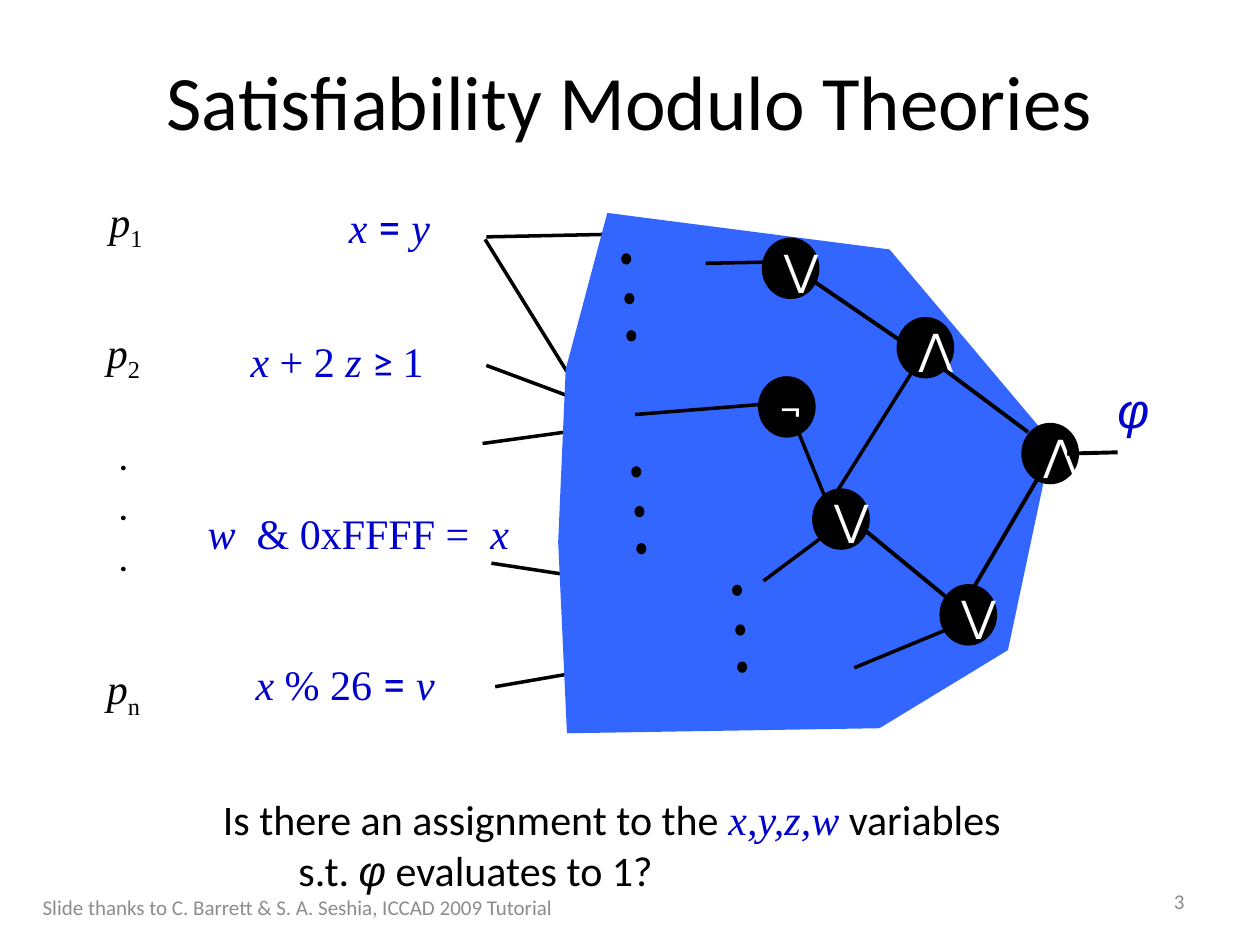
"""Build a slide on satisfiability modulo theories as a circuit of gates."""
import pptx
import pptx.dml.color
import pptx.enum.shapes
import pptx.enum.text
import pptx.oxml
import pptx.util

WIDE, HIGH = pptx.util.Inches(10), pptx.util.Inches(7.5)
CELL = WIDE / 100
HUES = {"ink": "000000", "paper": "FFFFFF", "body": "3366FF", "term": "0000CC", "note": "8C8C8C"}
SERIF, SANS = "Times New Roman", "Calibri"
OVAL = pptx.enum.shapes.MSO_SHAPE.OVAL
ALIGN = pptx.enum.text.PP_ALIGN
ANCHOR = pptx.enum.text.MSO_ANCHOR

VAR = {"font": SERIF, "italic": True}
SUB = {"font": SERIF, "base": -25000}
BLUE = {**VAR, "hue": "term"}
PHI = {"font": "Arial", "italic": True}

BODY = [(48.2, 16.9), (70.6, 19.8), (83.5, 35.1), (80, 51.6), (69.8, 57.8), (45, 58.2), (44.3, 43), (44.9, 29.3)]
WIRES = [
    (38.6, 18.8, 48.3, 18.6), (38.5, 19, 45, 29.5), (38.6, 29, 46.1, 31.8),
    (38.3, 35.2, 49.2, 33.7), (39, 44.7, 51.4, 46.6), (39.3, 54.5, 52.6, 52.2),
]
GATES = [
    ("⋁", 74.7, 46.5), ("⋀", 81.2, 33.7), ("¬", 60.3, 30),
    ("⋁", 64.6, 38.9), ("⋀", 71.3, 25.3), ("⋁", 60.6, 19),
]
BOLD = [
    (74.9, 29.3, 81.6, 34.3), (82.4, 37.9, 77.3, 46.6), (72, 27.4, 64.4, 22.2),
    (68.3, 41.8, 75.6, 47.8), (84.7, 36, 88.7, 35.9),
]
THIN = [
    (56, 20.9, 61, 20.8), (72.4, 29.5, 66.5, 38.9), (63, 33.4, 65.7, 40),
    (65.7, 42.3, 60.6, 46.1), (75.8, 49.7, 67.8, 53), (60.4, 32.1, 50.4, 32.9),
]
DOTS = [(49.3, 20.1), (58.1, 46.4), (50.1, 37)]
NAMES = [("1", 7.7, 15), ("2", 7.5, 25.4), ("n", 7.5, 52.1)]
TERMS = [
    ((18.9, 26.1, 16.8, 5.1), [("x", {}), (" + 2 ", {"italic": False}), ("z ", {}),
                               ("≥ ", {"font": SANS, "italic": False}), ("1", {"italic": False})]),
    ((19.3, 51.8, 18.1, 5), [("x", {}), (" % 26", {"italic": False}),
                             (" = ", {"font": "Roboto", "italic": False}), ("v", {})]),
    ((15.5, 39.8, 27, 5), [("w", {}), ("  & 0xFFFF =  ", {"italic": False}), ("x", {})]),
    ((26.7, 15.5, 10.6, 5), [("x ", {}), ("= ", {"font": "Roboto", "italic": False}), ("y", {})]),
]


def grid(*cells):
    """Turn grid cells into slide lengths."""
    return [pptx.util.Emu(round(cell * CELL)) for cell in cells]


def tint(hue):
    """Return the named colour."""
    return pptx.dml.color.RGBColor.from_string(HUES[hue])


def style(run, font=SANS, size=24, hue="ink", italic=False, base=0):
    """Format one run."""
    run.font.name, run.font.size, run.font.italic = font, pptx.util.Pt(size), italic
    run.font.color.rgb = tint(hue)
    if base:
        run._r.get_or_add_rPr().set("baseline", str(base))


def write(frame, paras, align=ALIGN.LEFT, anchor=ANCHOR.TOP, wrap=False, **look):
    """Fill a text frame with paragraphs of runs."""
    frame.word_wrap, frame.vertical_anchor = wrap, anchor
    for i, runs in enumerate(paras):
        para = frame.add_paragraph() if i else frame.paragraphs[0]
        para.alignment = align
        for words, extra in runs:
            run = para.add_run()
            run.text = words
            style(run, **{**look, **extra})


def text(slide, box, paras, **look):
    """Add a text box; a plain string is one paragraph."""
    if isinstance(paras, str):
        paras = [[(paras, {})]]
    frame = slide.shapes.add_textbox(*grid(*box)).text_frame
    write(frame, paras, **look)
    return frame


def wire(slide, ends, width=2):
    """Draw a straight black line."""
    line = slide.shapes.add_connector(pptx.enum.shapes.MSO_CONNECTOR.STRAIGHT, *grid(*ends))
    line.line.color.rgb = tint("ink")
    line.line.width = pptx.util.Pt(width)
    line._element.spPr.append(pptx.oxml.parse_xml(
        '<a:effectLst xmlns:a="http://schemas.openxmlformats.org/drawingml/2006/main"/>'))


def paint(shape, hue):
    """Give a shape a flat fill without outline or shadow."""
    shape.shadow.inherit = False
    shape.fill.solid()
    shape.fill.fore_color.rgb = tint(hue)
    shape.line.fill.background()
    return shape


def gate(slide, sign, left, top):
    """Add a logic gate with its sign."""
    shape = paint(slide.shapes.add_shape(OVAL, *grid(left, top, 4.3, 4.6)), "ink")
    shape.line.color.rgb = tint("ink")
    shape.line.width = pptx.util.Pt(2)
    write(shape.text_frame, [[(sign, {})]], anchor=ANCHOR.MIDDLE, hue="paper")


def dots(slide, left, top):
    """Add a group of three dots going down."""
    group = slide.shapes.add_group_shape()
    for right, down in ((0, 0), (0.25, 3.15), (0.4, 6.1)):
        paint(group.shapes.add_shape(OVAL, *grid(left + right, top + down, 0.8, 0.9)), "ink")


def body(slide):
    """Draw the outline that holds the circuit."""
    first, *rest = [grid(*point) for point in BODY]
    build = slide.shapes.build_freeform(*first)
    build.add_line_segments(rest, close=True)
    paint(build.convert_to_shape(), "body")


def circuit(slide):
    """Draw inputs, gates, wires and dots."""
    for ends in WIRES:
        wire(slide, ends)
    body(slide)
    for item in GATES:
        gate(slide, *item)
    for ends in BOLD:
        wire(slide, ends, 2.25)
    for ends in THIN:
        wire(slide, ends)
    for spot in DOTS:
        dots(slide, *spot)


def labels(slide):
    """Write the names, terms and output of the circuit."""
    text(slide, (8.4, 33.5, 2.4, 13), [[(".", {})]] * 3, wrap=True, font="Roboto")
    text(slide, (87.7, 29.6, 4, 5.7), "φ", **PHI, size=28, hue="term")
    for sub, left, top in NAMES:
        text(slide, (left, top, 4.8, 5), [[("p", VAR), (sub, SUB)]])
    for box, runs in TERMS:
        text(slide, box, [runs], **BLUE)


def prose(slide):
    """Write the title, question, credit and number."""
    text(slide, (5, 0, 90, 15.8), "Satisfiability Modulo Theories", size=44,
         align=ALIGN.CENTER, anchor=ANCHOR.MIDDLE, wrap=True)
    ask = text(slide, (16.7, 62.5, 74.5, 9), [
        [("Is there an assignment to the ", {}), ("x,y,z,w", BLUE), (" variables", {})],
        [("s.t. ", {}), ("φ", PHI), (" evaluates to 1?", {})],
    ])
    ask.paragraphs[1]._p.get_or_add_pPr().set("marL", str(grid(6)[0]))
    note = {"size": 12, "hue": "note", "anchor": ANCHOR.MIDDLE, "wrap": True}
    text(slide, (2.4, 70.6, 43.3, 2.8), "Slide thanks to C. Barrett & S. A. Seshia, ICCAD 2009 Tutorial", **note)
    text(slide, (71.7, 69.5, 23.3, 4), "3", align=ALIGN.RIGHT, **note)


def main():
    """Build and save the slide."""
    deck = pptx.Presentation()
    deck.slide_width, deck.slide_height = WIDE, HIGH
    slide = deck.slides.add_slide(deck.slide_layouts[6])
    circuit(slide)
    labels(slide)
    prose(slide)
    deck.save("out.pptx")


if __name__ == "__main__":
    main()
